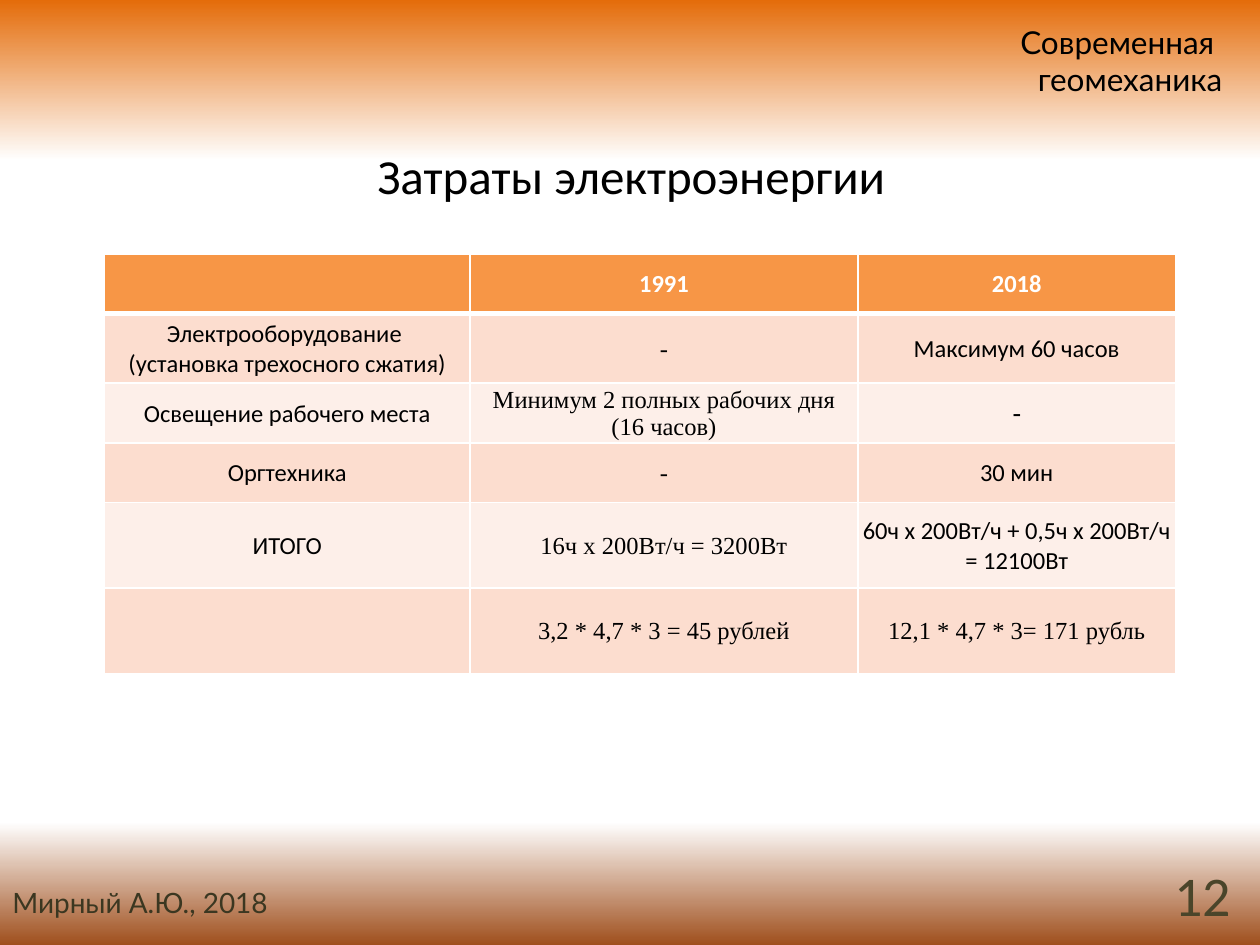
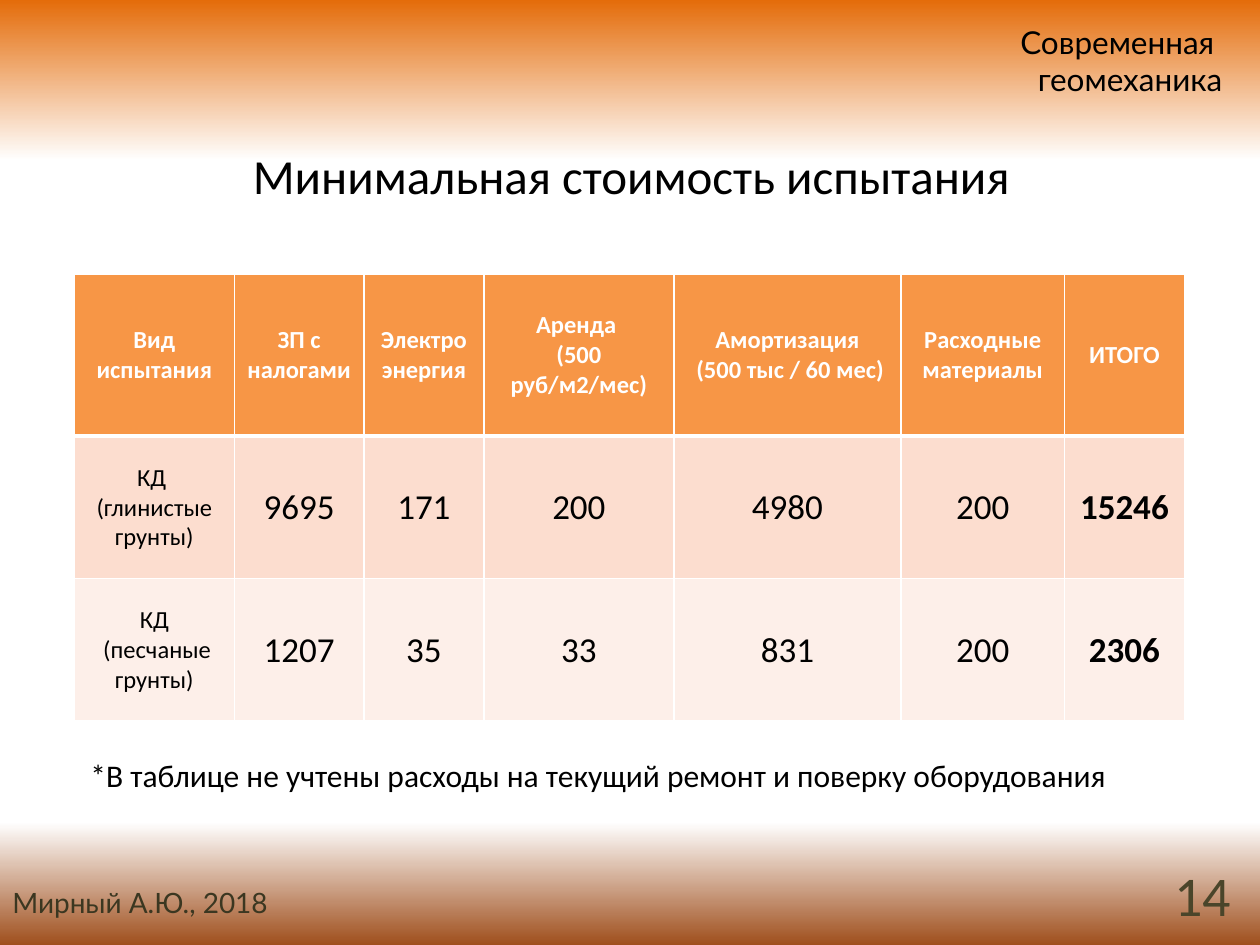
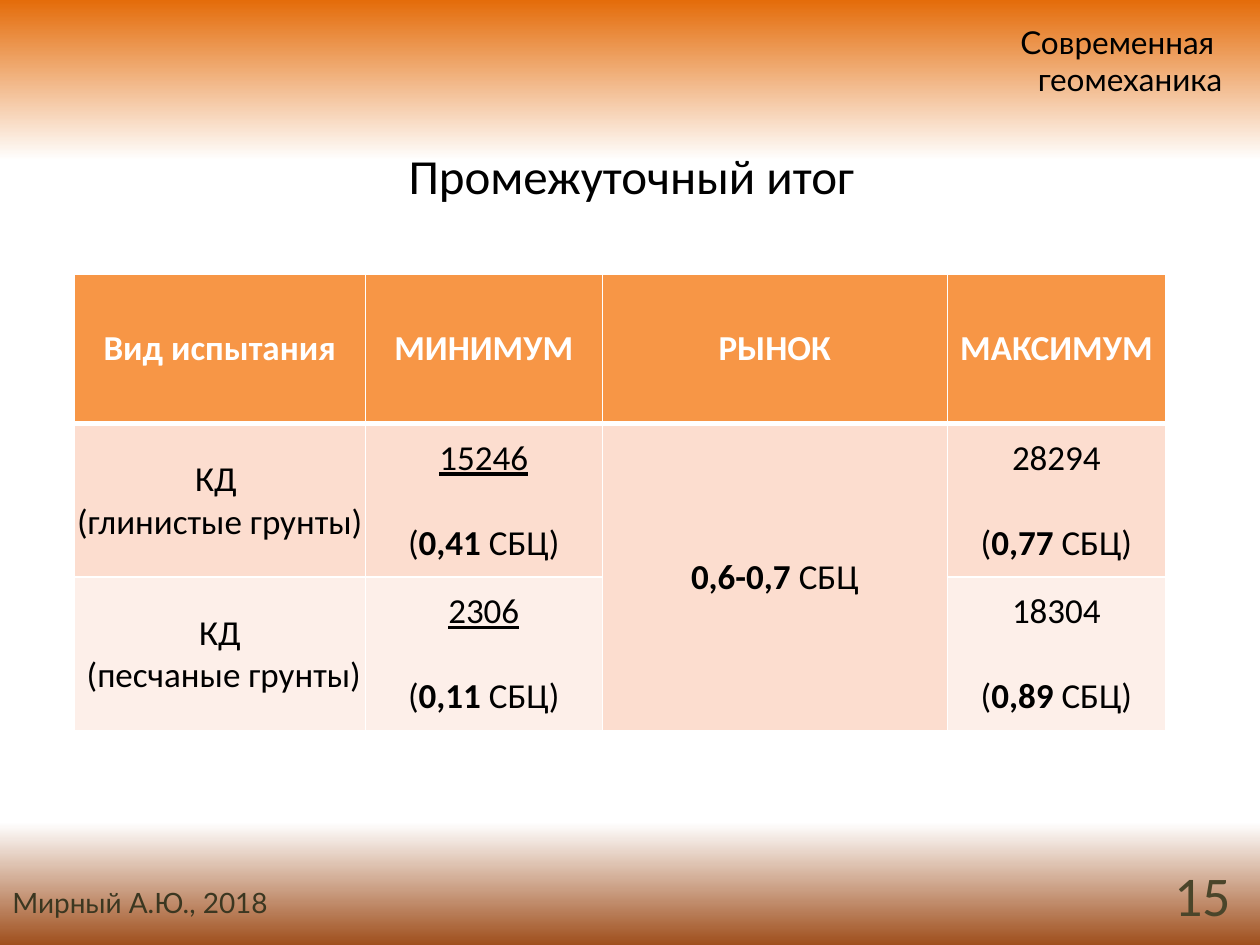
from dataclasses import dataclass
from typing import Optional

from lxml.etree import SubElement
from pptx import Presentation
from pptx.dml.color import RGBColor
from pptx.enum.text import MSO_ANCHOR, MSO_AUTO_SIZE, PP_ALIGN
from pptx.oxml import parse_xml
from pptx.oxml.ns import nsdecls, qn
from pptx.util import Inches, Pt

COLORS = {
    "text": "000000",
    "white": "FFFFFF",
    "number": "4A452A",
    "author": "3B3721",
    "band_top": "E46C0A",
    "band_bottom": "9F4F1D",
    "header": "F79646",
    "odd_row": "FCDDCF",
    "even_row": "FDEFE9",
}
BACKGROUND_STOPS = (
    (0, "band_top", 77),
    (17, "white", 100),
    (87, "white", 100),
    (100, "band_bottom", 50),
)
SERIF = "Times New Roman"


@dataclass(frozen=True)
class Span:
    text: str
    bold: bool = False
    underline: bool = False


@dataclass(frozen=True)
class Cell:
    lines: tuple[tuple[Span, ...], ...] = ()
    size: int = 14
    font: str = "Calibri"
    gap: int = 0
    rows: int = 1


@dataclass(frozen=True)
class Label:
    text: str
    left: float
    top: float
    width: float
    height: float
    size: int
    font: str = "Calibri"
    color: str = "text"
    align: PP_ALIGN = PP_ALIGN.LEFT
    middle: bool = False


@dataclass(frozen=True)
class Grid:
    left: float
    top: float
    columns: tuple[float, ...]
    heights: tuple[float, ...]
    rows: tuple[tuple[Optional[Cell], ...], ...]


@dataclass(frozen=True)
class Page:
    title: str
    number: int
    grid: Grid
    note: Optional[Label] = None


AUTHOR = Label("Мирный А.Ю., 2018", 0, 6.98, 2.99, 0.37, 16, "Lato", "author")
BRAND = Label("Современная \nгеомеханика", 6.26, 0.13, 3.54, 0.71, 18, "Lato", align=PP_ALIGN.RIGHT)


def plain(text: str, size: int = 14, font: str = "Calibri", bold: bool = False) -> Cell:
    return Cell(tuple((Span(line, bold),) for line in text.split("\n")), size, font)


def heading(*texts: str, size: int = 14) -> tuple[Cell, ...]:
    return tuple(plain(text, size, bold=True) for text in texts)


def costs(kind: str, *amounts: str) -> tuple[Cell, ...]:
    *parts, total = amounts
    return plain(kind), *(plain(part, 20) for part in parts), plain(total, 20, bold=True)


def price(amount: str, share: str, underline: bool = False) -> Cell:
    lines = (Span(amount, underline=underline),), (Span("("), Span(share, bold=True), Span(" СБЦ)"))
    return Cell(lines, 20, gap=24)


PAGES = (
    Page("Затраты электроэнергии", 12, Grid(
        0.83, 2.02, (2.9, 3.08, 2.52), (0.47, 0.55, 0.47, 0.47, 0.68, 0.68),
        (
            (Cell(), *heading("1991", "2018")),
            (plain("Электрооборудование \n(установка трехосного сжатия)"),
             plain("-", font=SERIF), plain("Максимум 60 часов")),
            (plain("Освещение рабочего места"),
             plain("Минимум 2 полных рабочих дня\n(16 часов)", font=SERIF), plain("-", 16)),
            (plain("Оргтехника"), plain("-", font=SERIF), plain("30 мин")),
            (plain("ИТОГО"), plain("16ч х 200Вт/ч = 3200Вт", font=SERIF),
             plain("60ч х 200Вт/ч + 0,5ч х 200Вт/ч = 12100Вт")),
            (Cell(), plain("3,2 * 4,7 * 3 = 45 рублей", font=SERIF),
             plain("12,1 * 4,7 * 3= 171 рубль", font=SERIF)),
        ),
    )),
    Page("Минимальная стоимость испытания", 14, Grid(
        0.59, 2.18, (1.27, 1.03, 0.95, 1.51, 1.8, 1.3, 0.95), (1.28, 1.13, 1.13),
        (
            heading("Вид испытания", "ЗП с налогами", "Электроэнергия", "Аренда \n(500 руб/м2/мес)",
                    "Амортизация\n (500 тыс / 60 мес)", "Расходные материалы", "ИТОГО"),
            costs("КД \n(глинистые грунты)", "9695", "171", "200", "4980", "200", "15246"),
            costs("КД\n (песчаные грунты)", "1207", "35", "33", "831", "200", "2306"),
        ),
    ), Label("*В таблице не учтены расходы на текущий ремонт и поверку оборудования",
             0.62, 5.95, 8.66, 0.4, 18)),
    Page("Промежуточный итог", 15, Grid(
        0.59, 2.18, (2.31, 1.88, 2.74, 1.73), (1.18, 1.22, 1.22),
        (
            heading("Вид испытания", "МИНИМУМ", "РЫНОК", "МАКСИМУМ", size=20),
            (plain("КД \n(глинистые грунты)", 20), price("15246", "0,41", True),
             Cell(((Span("0,6-0,7", bold=True), Span(" СБЦ")),), 20, rows=2), price("28294", "0,77")),
            (plain("КД\n (песчаные грунты)", 20), price("2306", "0,11", True),
             None, price("18304", "0,89")),
        ),
    )),
)


def write(para, text: str, *, size: int, font: str = "Calibri", color: str = "text",
          bold: bool = False, underline: bool = False) -> None:
    run = para.add_run()
    run.text = text
    run.font.size = Pt(size)
    run.font.name = font
    run.font.bold = bold
    run.font.underline = underline
    run.font.color.rgb = RGBColor.from_string(COLORS[color])


def next_para(frame, index: int, align: PP_ALIGN):
    para = frame.add_paragraph() if index else frame.paragraphs[0]
    para.alignment = align
    return para


def set_background(deck) -> None:
    fill = deck.slide_master.background.fill
    fill.gradient()
    fill.gradient_angle = 270
    stops = fill.gradient_stops
    stop_list = deck.slide_master.element.find(".//" + qn("a:gsLst"))
    for stop in list(stop_list)[:len(stops)]:
        stop_list.remove(stop)
    for position, color, opacity in BACKGROUND_STOPS:
        stop = SubElement(stop_list, qn("a:gs"), pos=str(position * 1000))
        shade = SubElement(stop, qn("a:srgbClr"), val=COLORS[color])
        if opacity < 100:
            SubElement(shade, qn("a:alpha"), val=str(opacity * 1000))


def draw_title(slide, text: str) -> None:
    title = slide.shapes.title
    title.left, title.top = Inches(0.51), Inches(1.07)
    title.width, title.height = Inches(9), Inches(0.63)
    frame = title.text_frame
    frame.word_wrap = True
    frame.auto_size = MSO_AUTO_SIZE.NONE
    frame.vertical_anchor = MSO_ANCHOR.MIDDLE
    write(next_para(frame, 0, PP_ALIGN.CENTER), text, size=28)


def draw_label(slide, label: Label) -> None:
    box = slide.shapes.add_textbox(Inches(label.left), Inches(label.top),
                                   Inches(label.width), Inches(label.height))
    frame = box.text_frame
    frame.word_wrap = True
    if label.middle:
        frame.vertical_anchor = MSO_ANCHOR.MIDDLE
    else:
        frame.auto_size = MSO_AUTO_SIZE.SHAPE_TO_FIT_TEXT
    for index, line in enumerate(label.text.split("\n")):
        write(next_para(frame, index, label.align), line,
              size=label.size, font=label.font, color=label.color)


def set_borders(target, row: int) -> None:
    properties = target._tc.get_or_add_tcPr()
    for index, side in enumerate(("lnL", "lnR", "lnT", "lnB")):
        width = 3 if (side, row) in (("lnB", 0), ("lnT", 1)) else 1
        properties.insert(index, parse_xml(
            f'<a:{side} {nsdecls("a")} w="{Pt(width)}"><a:solidFill>'
            f'<a:srgbClr val="{COLORS["white"]}"/></a:solidFill></a:{side}>'))


def fill_cell(target, cell: Optional[Cell], row: int) -> None:
    fill = "header" if row == 0 else "odd_row" if row % 2 else "even_row"
    target.fill.solid()
    target.fill.fore_color.rgb = RGBColor.from_string(COLORS[fill])
    target.vertical_anchor = MSO_ANCHOR.MIDDLE
    if row:
        target.margin_left = target.margin_right = target.margin_top = Inches(0.01)
        target.margin_bottom = Inches(0)
    set_borders(target, row)
    if cell is None:
        return
    for index, line in enumerate(cell.lines):
        para = next_para(target.text_frame, index, PP_ALIGN.CENTER)
        if index and cell.gap:
            para.space_before = Pt(cell.gap)
        for span in line:
            write(para, span.text, size=cell.size, font=cell.font,
                  color="text" if row else "white", bold=span.bold, underline=span.underline)


def draw_grid(slide, grid: Grid) -> None:
    frame = slide.shapes.add_table(len(grid.heights), len(grid.columns),
                                   Inches(grid.left), Inches(grid.top),
                                   Inches(sum(grid.columns)), Inches(sum(grid.heights)))
    table = frame.table
    table.horz_banding = False
    for column, width in zip(table.columns, grid.columns):
        column.width = Inches(width)
    for row, height in zip(table.rows, grid.heights):
        row.height = Inches(height)
    for row, cells in enumerate(grid.rows):
        for column, cell in enumerate(cells):
            target = table.cell(row, column)
            fill_cell(target, cell, row)
            if cell and cell.rows > 1:
                target.merge(table.cell(row + cell.rows - 1, column))


def draw_page(deck, page: Page) -> None:
    slide = deck.slides.add_slide(deck.slide_layouts[5])
    draw_title(slide, page.title)
    number = Label(str(page.number), 7.54, 6.9, 2.33, 0.4, 32,
                   color="number", align=PP_ALIGN.RIGHT, middle=True)
    for label in (number, AUTHOR, BRAND):
        draw_label(slide, label)
    draw_grid(slide, page.grid)
    if page.note:
        draw_label(slide, page.note)


def main() -> None:
    deck = Presentation()
    deck.slide_width, deck.slide_height = Inches(10), Inches(7.5)
    set_background(deck)
    for page in PAGES:
        draw_page(deck, page)
    deck.save("out.pptx")


if __name__ == "__main__":
    main()
